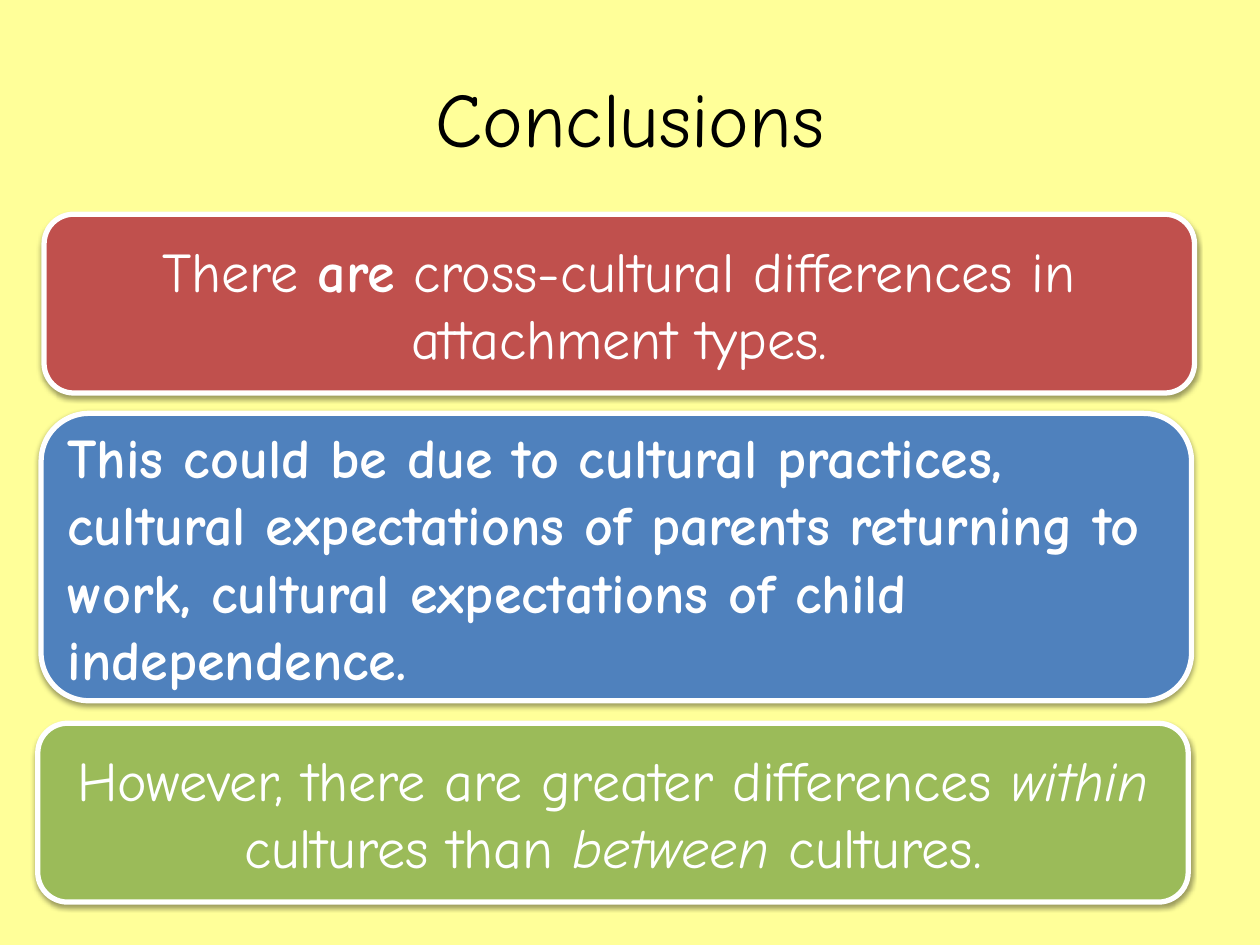
from lxml import etree
from pptx import Presentation
from pptx.dml.color import RGBColor
from pptx.enum.shapes import MSO_SHAPE
from pptx.enum.text import MSO_ANCHOR, PP_ALIGN
from pptx.util import Pt

BLACK = RGBColor(0x00, 0x00, 0x00)
WHITE = RGBColor(0xFF, 0xFF, 0xFF)
YELLOW = RGBColor(0xFF, 0xFF, 0x99)
RED = RGBColor(0xC0, 0x50, 0x4D)
BLUE = RGBColor(0x4F, 0x81, 0xBD)
GREEN = RGBColor(0x9B, 0xBB, 0x59)
FONT = "Comic Neue"
SHADOW = (
    '<a:outerShdw xmlns:a="http://schemas.openxmlformats.org/drawingml/2006/main" '
    'blurRad="40000" dist="20000" dir="5400000" rotWithShape="0">'
    '<a:srgbClr val="000000"><a:alpha val="38000"/></a:srgbClr></a:outerShdw>'
)


def style_paragraph(paragraph, size, color, alignment):
    paragraph.alignment = alignment
    paragraph.font.name = FONT
    paragraph.font.size = Pt(size)
    paragraph.font.color.rgb = color


presentation = Presentation()
presentation.slide_width = Pt(720)
presentation.slide_height = Pt(540)
slide = presentation.slides.add_slide(presentation.slide_layouts[6])
slide.background.fill.solid()
slide.background.fill.fore_color.rgb = YELLOW

title = slide.shapes.add_textbox(Pt(36), Pt(21.6), Pt(648), Pt(90))
title.text_frame.word_wrap = True
title.text_frame.vertical_anchor = MSO_ANCHOR.MIDDLE
title_paragraph = title.text_frame.paragraphs[0]
title_paragraph.add_run().text = "Conclusions"
style_paragraph(title_paragraph, 44, BLACK, PP_ALIGN.CENTER)

conclusions = [
    (25.2, 122.4, 102.2, RED, PP_ALIGN.CENTER, [
        ("There ", ""),
        ("are", "bold"),
        (" cross-cultural differences in attachment types.", ""),
    ]),
    (23.5, 236.2, 164.2, BLUE, PP_ALIGN.LEFT, [
        ("This could be due to cultural practices, cultural expectations of "
         "parents returning to work, cultural expectations of child "
         "independence.", "bold"),
    ]),
    (21.6, 413.3, 102.2, GREEN, PP_ALIGN.CENTER, [
        ("However, there are greater differences ", ""),
        ("within ", "italic"),
        ("cultures than ", ""),
        ("between", "italic"),
        (" cultures.", ""),
    ]),
]

for left, top, height, color, alignment, runs in conclusions:
    shape = slide.shapes.add_shape(
        MSO_SHAPE.ROUNDED_RECTANGLE, Pt(left), Pt(top), Pt(657.4), Pt(height))
    shape.fill.solid()
    shape.fill.fore_color.rgb = color
    shape.line.color.rgb = WHITE
    shape.line.width = Pt(3)
    shape.shadow.inherit = False
    shape._element.spPr.effectLst.append(etree.fromstring(SHADOW))

    shape.text_frame.word_wrap = True
    shape.text_frame.vertical_anchor = MSO_ANCHOR.MIDDLE
    paragraph = shape.text_frame.paragraphs[0]
    style_paragraph(paragraph, 32, WHITE, alignment)
    for text, emphasis in runs:
        run = paragraph.add_run()
        run.text = text
        if emphasis == "bold":
            run.font.bold = True
        elif emphasis == "italic":
            run.font.italic = True

presentation.save("out.pptx")
